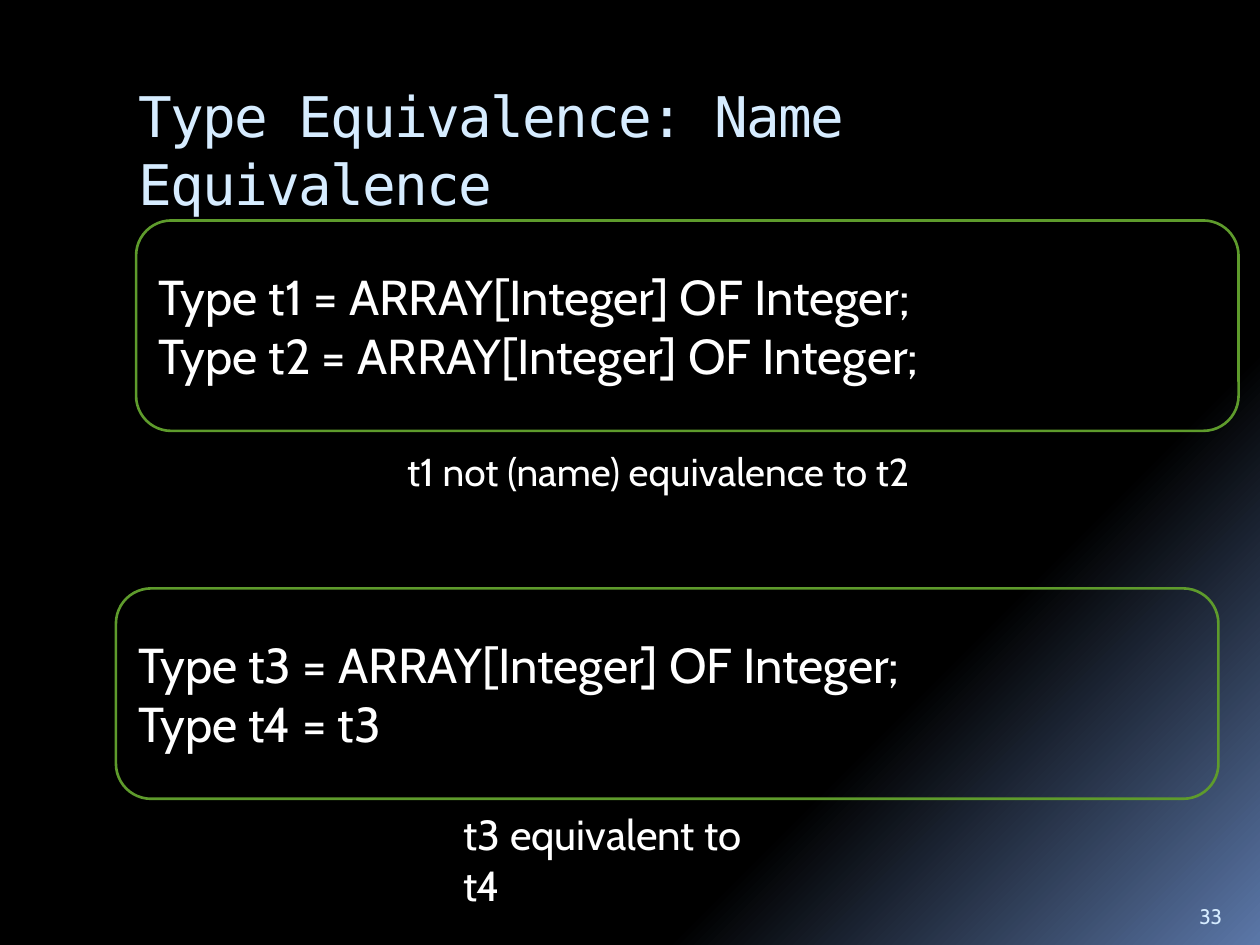
from lxml import etree
from pptx import Presentation
from pptx.dml.color import RGBColor
from pptx.enum.shapes import MSO_SHAPE
from pptx.enum.text import MSO_ANCHOR as Anchor, MSO_AUTO_SIZE as AutoSize, PP_ALIGN as Align
from pptx.oxml.ns import qn
from pptx.util import Inches, Pt

COLORS = {"title": "D6ECFF", "text": "FFFFFF", "border": "5E9B2C",
          "black": "000000", "glow": "5B77A8"}


def write(shape, lines, size, color="text", font="Cabin", anchor=Anchor.TOP, align=Align.LEFT):
    frame = shape.text_frame
    frame_format = {"word_wrap": True, "auto_size": AutoSize.NONE, "vertical_anchor": anchor}
    for name, value in frame_format.items():
        setattr(frame, name, value)
    frame.text = "\n".join(lines)
    span_format = {"size": Pt(size), "name": font}
    for para in frame.paragraphs:
        para.alignment = align
        for span in para.runs:
            for name, value in span_format.items():
                setattr(span.font, name, value)
            span.font.color.rgb = RGBColor.from_string(COLORS[color])
    return frame


deck = Presentation()
deck.slide_width, deck.slide_height = Inches(10), Inches(7.5)
page = deck.slides.add_slide(deck.slide_layouts[5])

# Background: black fading to blue in the lower right corner
background = page.background.fill
background.gradient()
background.gradient_angle = 315
stops = next(page.element.iter(qn("a:gsLst")))
for stop in list(stops):
    stops.remove(stop)
for percent, color in ((65, "black"), (73, "black"), (100, "glow")):
    stop = etree.SubElement(stops, qn("a:gs"), pos=str(percent * 1000))
    etree.SubElement(stop, qn("a:srgbClr"), val=COLORS[color])

# Title
title = page.shapes.title
title_place = {"left": 1, "top": 0.56, "width": 8.5, "height": 1}
for name, value in title_place.items():
    setattr(title, name, Inches(value))
frame = write(title, ["Type Equivalence: Name Equivalence"], 32, "title", "DejaVu Sans Mono")
frame.margin_top = Inches(0.09)
frame.paragraphs[0].runs[0].font._element.set("spc", "-100")

# Framed declarations
declarations = [
    (1.08, 1.75, ["Type t1 = ARRAY[Integer] OF Integer;", "Type t2 = ARRAY[Integer] OF Integer;"]),
    (0.92, 4.67, ["Type t3 = ARRAY[Integer] OF Integer;", "Type t4 = t3"]),
]
for left, top, lines in declarations:
    box = page.shapes.add_shape(MSO_SHAPE.ROUNDED_RECTANGLE, Inches(left), Inches(top),
                                Inches(8.75), Inches(1.67))
    box.shadow.inherit = False
    box.fill.background()
    box.line.color.rgb = RGBColor.from_string(COLORS["border"])
    box.line.width = Pt(1.5)
    write(box, lines, 28, anchor=Anchor.MIDDLE)

# Conclusions
verdict = page.shapes.add_textbox(Inches(3), Inches(3.5), Inches(4.38), Inches(0.62))
para = write(verdict, ["t1 not (name) equivalence to t2"], 22.2, align=Align.CENTER).paragraphs[0]
para.space_before = Pt(7)
para._p.get_or_add_pPr().set("marL", str(Inches(0.07)))

verdict = page.shapes.add_textbox(Inches(3.58), Inches(6.37), Inches(2.75), Inches(0.5))
write(verdict, ["t3 equivalent to t4"], 24)

# Page number
number = page.shapes.add_textbox(Inches(9.42), Inches(7.02), Inches(0.5), Inches(0.4))
write(number, ["33"], 12, "title", anchor=Anchor.BOTTOM)

deck.save("out.pptx")
